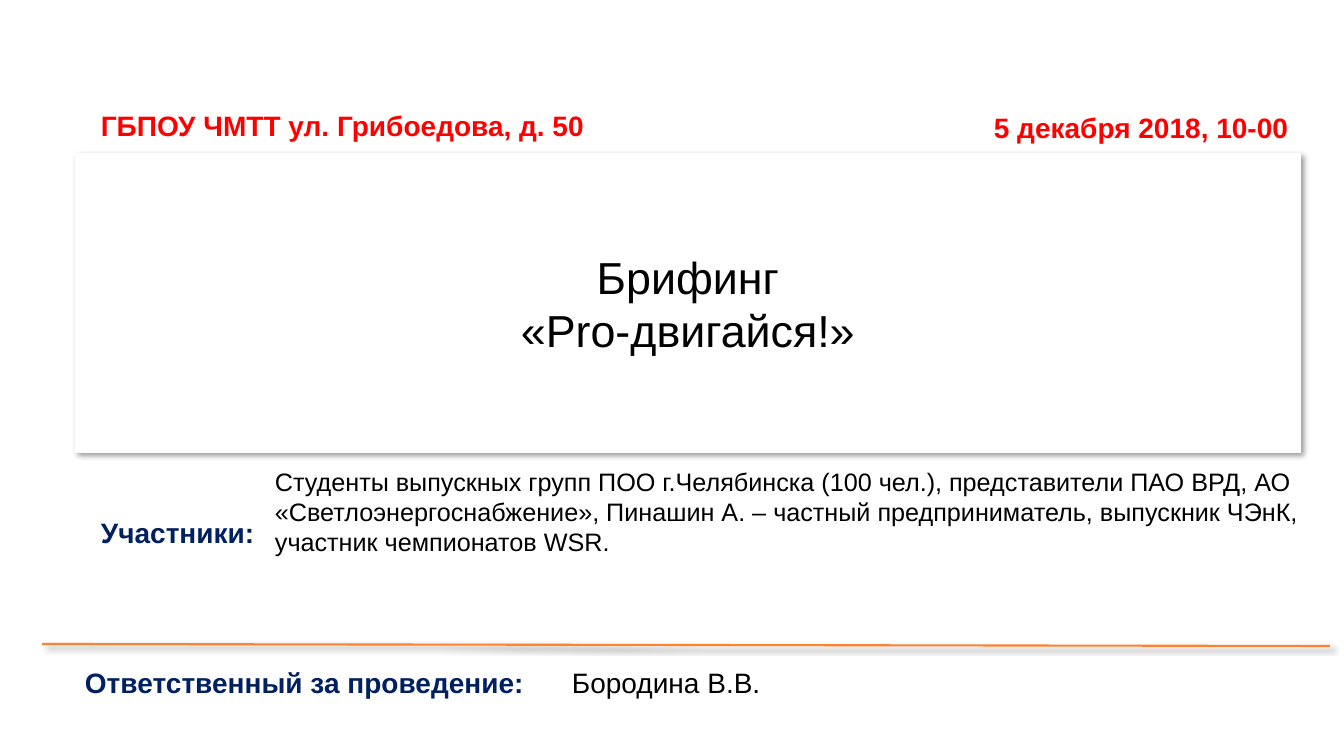
from dataclasses import dataclass

from lxml import etree
from pptx import Presentation
from pptx import util as u
from pptx.dml.color import RGBColor
from pptx.enum import shapes, text

SCALE = 914400 / 100.8
FONT = "Arial"
WHITE = RGBColor(0xFF, 0xFF, 0xFF)
BLACK = RGBColor(0x00, 0x00, 0x00)
RED = RGBColor(0xFF, 0x00, 0x00)
NAVY = RGBColor(0x00, 0x20, 0x60)
ORANGE = RGBColor(0xFD, 0x82, 0x31)

SHADOW = (
    '<a:effectLst xmlns:a="http://schemas.openxmlformats.org/drawingml/2006/main">'
    '<a:outerShdw blurRad="50800" dist="38100" dir="2700000" algn="tl" rotWithShape="0">'
    '<a:srgbClr val="000000"><a:alpha val="40000"/></a:srgbClr>'
    "</a:outerShdw></a:effectLst>"
)


@dataclass(frozen=True)
class Label:
    wording: str
    left: int
    top: int
    width: int
    height: int = 44
    color: RGBColor = BLACK
    size: int = 20
    bold: bool = False
    wrap: bool = False


LABELS = [
    Label("ГБПОУ ЧМТТ ул. Грибоедова, д. 50", 91, 104, 507, color=RED, bold=True),
    Label("5 декабря 2018, 10-00", 984, 106, 316, color=RED, bold=True),
    Label(
        "Студенты выпускных групп ПОО г.Челябинска (100 чел.), представители ПАО ВРД, "
        "АО «Светлоэнергоснабжение», Пинашин А. – частный предприниматель, "
        "выпускник ЧЭнК, участник чемпионатов WSR.",
        265, 461, 1079, 102, size=18, wrap=True,
    ),
    Label("Участники:", 91, 511, 175, color=NAVY, bold=True),
    Label("Ответственный за проведение:", 75, 661, 463, color=NAVY, bold=True),
    Label("Бородина В.В.", 562, 661, 672, wrap=True),
]


def px(length: int) -> u.Emu:
    return u.Emu(round(length * SCALE))


def style_spans(para, color: RGBColor, size: int, bold: bool) -> None:
    formats = {"name": FONT, "size": u.Pt(size), "bold": bold}
    for span in para.runs:
        for name, value in formats.items():
            setattr(span.font, name, value)
        span.font.color.rgb = color


def add_shadow(shape) -> None:
    shape._element.spPr.append(etree.fromstring(SHADOW))


def fill_title(page) -> None:
    title = page.shapes.title
    places = {"left": 75, "top": 153, "width": 1226, "height": 300}
    for name, value in places.items():
        setattr(title, name, px(value))
    title.fill.solid()
    title.fill.fore_color.rgb = WHITE
    add_shadow(title)
    frame = title.text_frame
    frame.text = "Брифинг\v«Pro-двигайся!»"
    frame.auto_size = text.MSO_AUTO_SIZE.NONE
    frame.vertical_anchor = text.MSO_ANCHOR.MIDDLE
    para = frame.paragraphs[0]
    para.alignment = text.PP_ALIGN.CENTER
    style_spans(para, BLACK, 32, False)


def add_divider(page) -> None:
    divider = page.shapes.add_connector(
        shapes.MSO_CONNECTOR.STRAIGHT, px(42), px(644), px(1330), px(646)
    )
    divider.line.color.rgb = ORANGE
    divider.line.width = u.Pt(1.5)
    add_shadow(divider)


def add_label(page, label: Label) -> None:
    box = page.shapes.add_textbox(
        px(label.left), px(label.top), px(label.width), px(label.height)
    )
    frame = box.text_frame
    frame.text = label.wording
    frame.word_wrap = label.wrap
    frame.auto_size = text.MSO_AUTO_SIZE.SHAPE_TO_FIT_TEXT
    style_spans(frame.paragraphs[0], label.color, label.size, label.bold)


def main() -> None:
    deck = Presentation()
    deck.slide_width, deck.slide_height = px(1344), px(756)
    page = deck.slides.add_slide(deck.slide_layouts[0])
    subtitle = page.placeholders[1]._element
    subtitle.getparent().remove(subtitle)
    fill_title(page)
    add_divider(page)
    for label in LABELS:
        add_label(page, label)
    deck.save("out.pptx")


if __name__ == "__main__":
    main()
